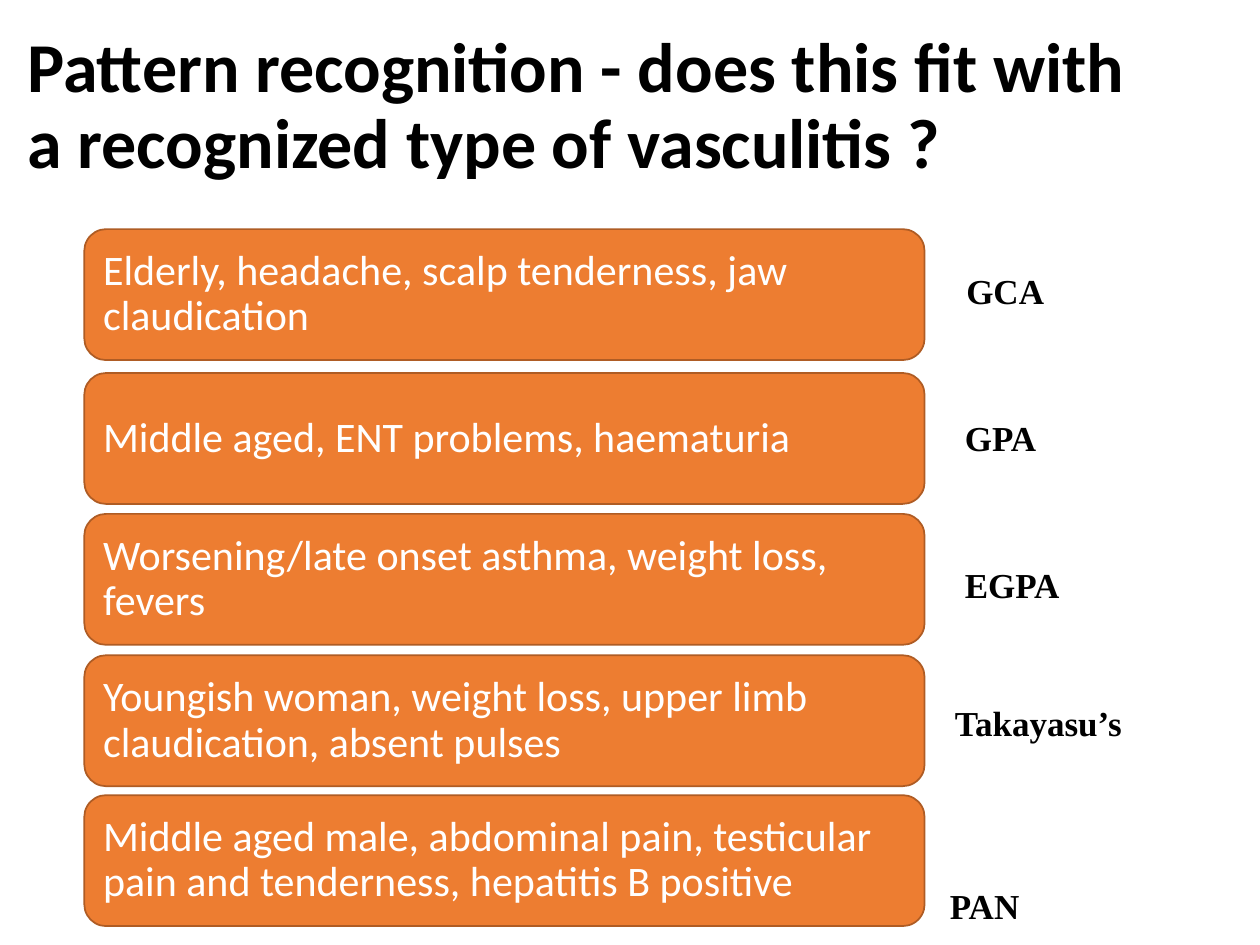
from dataclasses import dataclass

from pptx import Presentation
from pptx.dml.color import RGBColor
from pptx.enum.shapes import MSO_SHAPE
from pptx.enum.text import MSO_ANCHOR, MSO_AUTO_SIZE, PP_ALIGN
from pptx.util import Cm, Pt

ROUNDED = MSO_SHAPE.ROUNDED_RECTANGLE
MIDDLE, TOP = MSO_ANCHOR.MIDDLE, MSO_ANCHOR.TOP
LEFT = PP_ALIGN.LEFT
NO_FIT = MSO_AUTO_SIZE.NONE

BLACK = RGBColor(0x00, 0x00, 0x00)
WHITE = RGBColor(0xFF, 0xFF, 0xFF)
ORANGE = RGBColor(0xED, 0x7D, 0x31)
BROWN = RGBColor(0xAF, 0x5C, 0x24)

CARD_LEFT, CARD_WIDTH, CARD_HEIGHT = 1.7, 16.94, 2.64
LABEL_HEIGHT = 1.11


@dataclass
class Pattern:
    """A clinical picture and its diagnosis; lengths in cm."""
    features: str
    card_top: float
    diagnosis: str
    label_left: float
    label_top: float
    label_width: float


PATTERNS = [
    Pattern("Elderly, headache, scalp tenderness, jaw claudication", 4.62,
            "GCA", 19.23, 5.31, 2.54),
    Pattern("Middle aged, ENT problems, haematuria", 7.52,
            "GPA", 19.2, 8.26, 1.96),
    Pattern("Worsening/late onset asthma, weight loss, fevers", 10.36,
            "EGPA", 19.2, 11.23, 3.28),
    Pattern("Youngish woman, weight loss, upper limb claudication, absent pulses",
            13.21, "Takayasu’s", 19.0, 14.02, 4.37),
    Pattern("Middle aged male, abdominal pain, testicular pain and tenderness, "
            "hepatitis B positive", 16.03, "PAN", 18.9, 17.7, 2.54),
]


def write(sp, text: str, *, size: float, color: RGBColor, font: str = "Calibri",
          bold: bool = False, anchor=MIDDLE, spacing: float = 1.0,
          inset_y: float = 0.13, inset_right: float = 0.25) -> None:
    tf = sp.text_frame
    tf.word_wrap = True
    tf.auto_size = NO_FIT
    tf.vertical_anchor = anchor
    tf.margin_left, tf.margin_right = Cm(0.25), Cm(inset_right)
    tf.margin_top = tf.margin_bottom = Cm(inset_y)
    p = tf.paragraphs[0]
    p.alignment = LEFT
    p.line_spacing = spacing
    r = p.add_run()
    r.text = text
    r.font.name = font
    r.font.size = Pt(size)
    r.font.bold = bold
    r.font.color.rgb = color


def paint(sp, fill: RGBColor, line: RGBColor, width: float) -> None:
    sp.fill.solid()
    sp.fill.fore_color.rgb = fill
    sp.line.color.rgb = line
    sp.line.width = Pt(width)


def add_title(s, text: str) -> None:
    sp = s.shapes.title
    sp.left, sp.top, sp.width, sp.height = Cm(0.3), Cm(0.41), Cm(22.83), Cm(3.53)
    paint(sp, WHITE, WHITE, 0.75)
    write(sp, text, size=40, color=BLACK, bold=True, spacing=0.9, inset_right=0.36)


def add_card(s, pattern: Pattern) -> None:
    sp = s.shapes.add_shape(ROUNDED, Cm(CARD_LEFT), Cm(pattern.card_top),
                            Cm(CARD_WIDTH), Cm(CARD_HEIGHT))
    sp.shadow.inherit = False
    paint(sp, ORANGE, BROWN, 1)
    write(sp, pattern.features, size=24, color=WHITE, spacing=0.9, inset_y=0.25)


def add_label(s, pattern: Pattern) -> None:
    sp = s.shapes.add_textbox(Cm(pattern.label_left), Cm(pattern.label_top),
                              Cm(pattern.label_width), Cm(LABEL_HEIGHT))
    write(sp, pattern.diagnosis, size=20, color=BLACK, font="Times New Roman",
          bold=True, anchor=TOP)


def main() -> None:
    prs = Presentation()
    prs.slide_width, prs.slide_height = Cm(25.4), Cm(19.05)
    s = prs.slides.add_slide(prs.slide_layouts.get_by_name("Title Only"))
    add_title(s, "Pattern recognition - does this fit with a recognized type of vasculitis ?")
    for pattern in PATTERNS:
        add_card(s, pattern)
        add_label(s, pattern)
    prs.save("out.pptx")


if __name__ == "__main__":
    main()
